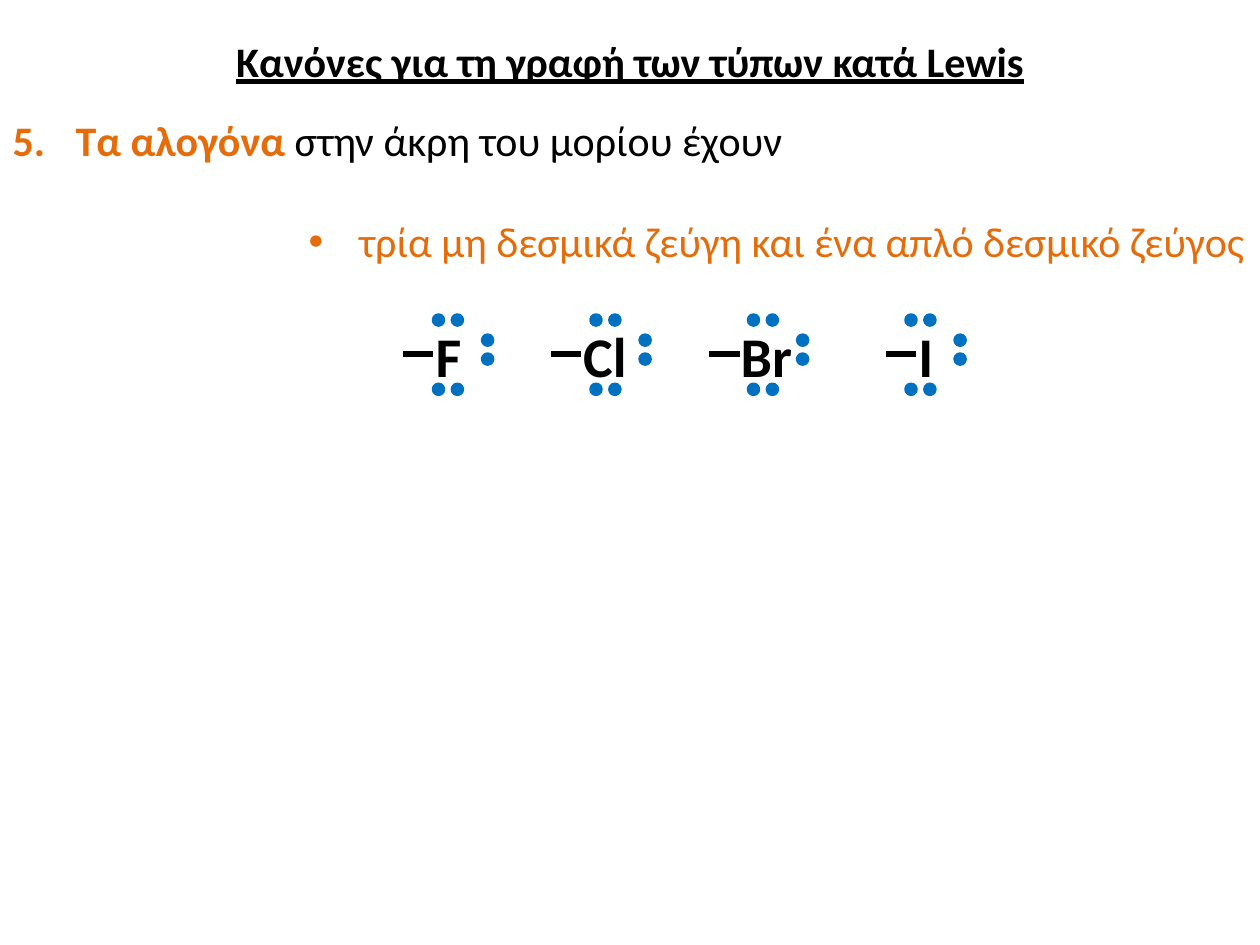
from dataclasses import dataclass

from lxml.etree import SubElement
from pptx import Presentation
from pptx.dml.color import RGBColor
from pptx.enum.shapes import MSO_CONNECTOR, MSO_SHAPE
from pptx.enum.text import MSO_ANCHOR, MSO_AUTO_SIZE, PP_ALIGN
from pptx.oxml.ns import qn
from pptx.util import Inches, Pt


@dataclass(frozen=True)
class Theme:
    font: str = "Calibri"
    ink: RGBColor = RGBColor(0x00, 0x00, 0x00)
    accent: RGBColor = RGBColor(0xE4, 0x6C, 0x0A)
    electron: RGBColor = RGBColor(0x00, 0x70, 0xC0)
    text_size: int = 24
    symbol_size: int = 32
    dot_line: float = 2
    bond_line: float = 3.5


@dataclass(frozen=True)
class Halogen:
    symbol: str
    text_left: float
    text_width: float
    dots_left: float
    bond_left: float


THEME = Theme()
SYMBOL_TOP = 2.5
SYMBOL_HEIGHT = 0.64
BOND_TOP = 2.81
BOND_LENGTH = 0.24
DOT_SIZE = 0.08
LONE_PAIR_DOTS = (
    (0.39, 2.66), (0.39, 2.81),
    (0.15, 2.5), (0, 2.5),
    (0.15, 3.05), (0, 3.05),
)
HALOGENS = (
    Halogen("F", 3.36, 0.41, 3.44, 3.2),
    Halogen("Cl", 4.53, 0.55, 4.69, 4.37),
    Halogen("Br", 5.78, 0.61, 5.94, 5.63),
    Halogen("I", 7.19, 0.32, 7.19, 7.03),
)


def place(shape, left: float, top: float, width: float, height: float) -> None:
    shape.left, shape.top = Inches(left), Inches(top)
    shape.width, shape.height = Inches(width), Inches(height)


def add_span(para, text: str, size: int, color: RGBColor,
             bold: bool = False, underline: bool = False) -> None:
    span = para.add_run()
    span.text = text
    span.font.name = THEME.font
    span.font.size = Pt(size)
    span.font.color.rgb = color
    span.font.bold = bold
    span.font.underline = underline


def set_marker(para, margin: float, hanging: float, font: str,
               tag: str, **attributes: str) -> None:
    properties = para._p.get_or_add_pPr()
    properties.set("marL", str(Inches(margin)))
    properties.set("indent", str(-Inches(hanging)))
    SubElement(properties, qn("a:buFont"), typeface=font)
    SubElement(properties, qn(tag), **attributes)


def prepare_frame(shape):
    frame = shape.text_frame
    frame.word_wrap = True
    frame.vertical_anchor = MSO_ANCHOR.TOP
    frame.auto_size = MSO_AUTO_SIZE.SHAPE_TO_FIT_TEXT
    return frame


def write_title(title) -> None:
    place(title, 0, 0.23, 10, 0.5)
    para = prepare_frame(title).paragraphs[0]
    para.alignment = PP_ALIGN.CENTER
    add_span(para, "Κανόνες για τη γραφή των τύπων κατά Lewis",
             THEME.text_size, THEME.ink, bold=True, underline=True)


def write_rule(body) -> None:
    place(body, 0, 0.86, 10, 1.31)
    frame = prepare_frame(body)
    rule = frame.paragraphs[0]
    rule.space_before = Pt(0)
    set_marker(rule, 0.5, 0.5, "+mj-lt", "a:buAutoNum", type="arabicPeriod", startAt="5")
    add_span(rule, "Τα αλογόνα ", THEME.text_size, THEME.accent, bold=True)
    add_span(rule, "στην άκρη του μορίου έχουν", THEME.text_size, THEME.ink)
    detail = frame.add_paragraph()
    detail.space_before = Pt(29)
    set_marker(detail, 2.75, 0.4, "Arial", "a:buChar", char="•")
    add_span(detail, "τρία μη δεσμικά ζεύγη και ένα απλό δεσμικό ζεύγος",
             THEME.text_size, THEME.accent)


def draw_electron(page, left: float, top: float) -> None:
    dot = page.shapes.add_shape(MSO_SHAPE.OVAL, Inches(left), Inches(top),
                                Inches(DOT_SIZE), Inches(DOT_SIZE))
    dot.shadow.inherit = False
    dot.fill.solid()
    dot.fill.fore_color.rgb = THEME.electron
    dot.line.color.rgb = THEME.electron
    dot.line.width = Pt(THEME.dot_line)


def draw_bond(page, left: float) -> None:
    bond = page.shapes.add_connector(
        MSO_CONNECTOR.STRAIGHT, Inches(left), Inches(BOND_TOP),
        Inches(left + BOND_LENGTH), Inches(BOND_TOP))
    bond.line.color.rgb = THEME.ink
    bond.line.width = Pt(THEME.bond_line)
    SubElement(bond._element.spPr, qn("a:effectLst"))


def draw_halogen(page, halogen: Halogen) -> None:
    box = page.shapes.add_textbox(Inches(halogen.text_left), Inches(SYMBOL_TOP),
                                  Inches(halogen.text_width), Inches(SYMBOL_HEIGHT))
    frame = prepare_frame(box)
    frame.word_wrap = False
    add_span(frame.paragraphs[0], halogen.symbol, THEME.symbol_size, THEME.ink, bold=True)
    for offset, top in LONE_PAIR_DOTS:
        draw_electron(page, halogen.dots_left + offset, top)
    draw_bond(page, halogen.bond_left)


def main() -> None:
    deck = Presentation()
    deck.slide_width, deck.slide_height = Inches(10), Inches(7.5)
    page = deck.slides.add_slide(deck.slide_layouts[1])
    write_title(page.shapes.title)
    write_rule(page.placeholders[1])
    for halogen in HALOGENS:
        draw_halogen(page, halogen)
    deck.save("out.pptx")


if __name__ == "__main__":
    main()
